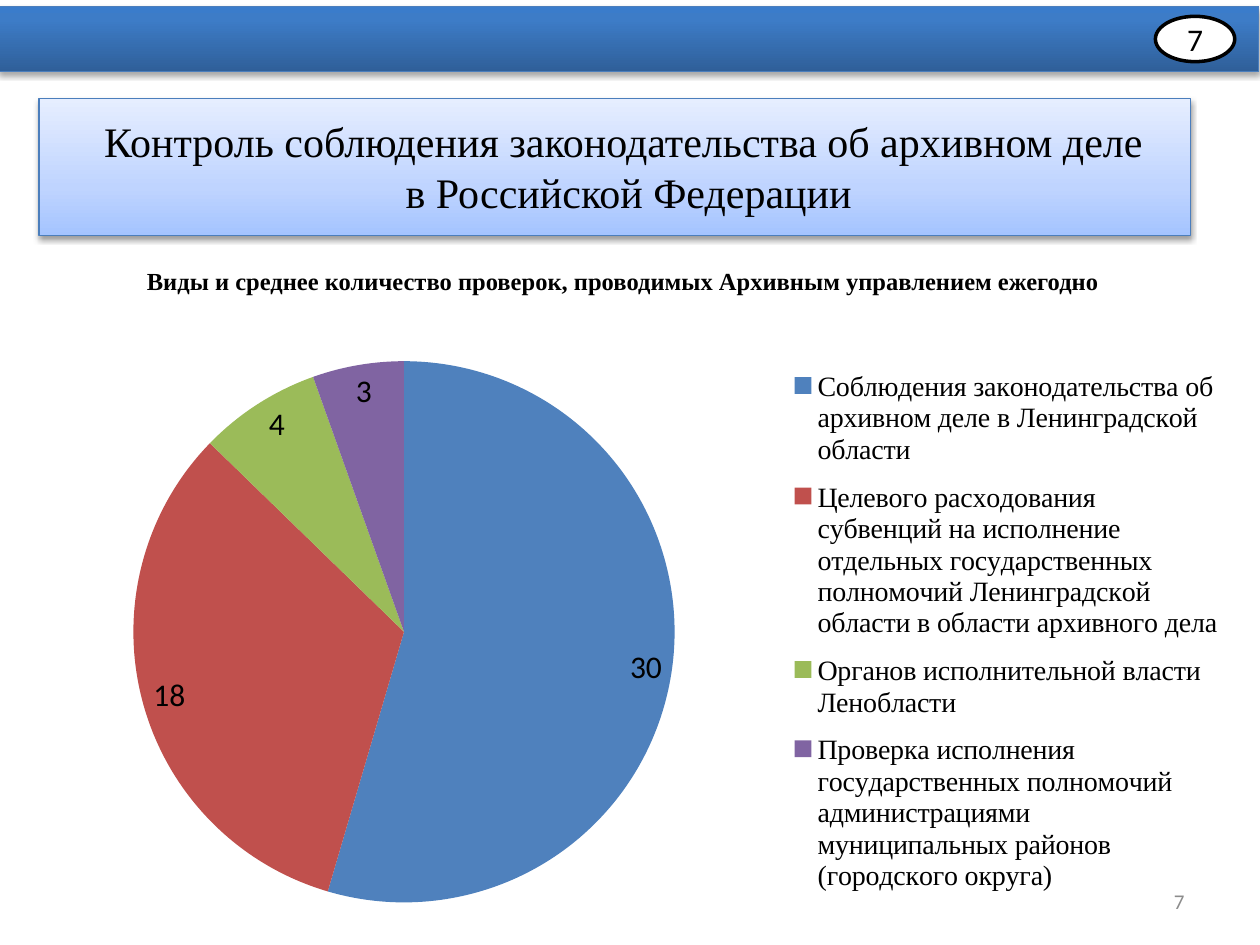
from lxml.etree import SubElement
from pptx import Presentation
from pptx.chart.data import CategoryChartData
from pptx.dml.color import RGBColor
from pptx.enum.chart import XL_CHART_TYPE, XL_LABEL_POSITION, XL_LEGEND_POSITION
from pptx.enum.shapes import MSO_SHAPE
from pptx.enum.text import MSO_ANCHOR, PP_ALIGN
from pptx.oxml import parse_xml
from pptx.oxml.ns import nsdecls, qn
from pptx.util import Inches, Pt

BLACK = RGBColor(0x00, 0x00, 0x00)
WHITE = RGBColor(0xFF, 0xFF, 0xFF)
GREY = RGBColor(0x8C, 0x8C, 0x8C)
EDGE = RGBColor(0x4B, 0x7E, 0xBC)
PALE = [(0, RGBColor(0xA4, 0xC4, 0xFF)), (35, RGBColor(0xBF, 0xD4, 0xFF)),
        (100, RGBColor(0xE6, 0xEE, 0xFF))]
DEEP = [(0, RGBColor(0x2F, 0x5F, 0x99)), (80, RGBColor(0x3D, 0x7C, 0xC7)),
        (100, RGBColor(0x3A, 0x7C, 0xCB))]
SERIF = "Times New Roman"
SANS = "Calibri"
CHECKS = [
    ("Соблюдения законодательства об архивном деле в Ленинградской области",
     30, RGBColor(0x4F, 0x81, 0xBD)),
    ("Целевого расходования субвенций на исполнение отдельных государственных "
     "полномочий Ленинградской области в области архивного дела",
     18, RGBColor(0xC0, 0x50, 0x4D)),
    ("Органов исполнительной власти Ленобласти ",
     4, RGBColor(0x9B, 0xBB, 0x59)),
    ("Проверка исполнения государственных полномочий администрациями "
     "муниципальных районов (городского округа) ",
     3, RGBColor(0x80, 0x64, 0xA2)),
]


def set_font(font, name, size, color=BLACK, bold=False):
    font.name, font.size, font.bold = name, Pt(size), bold
    font.color.rgb = color


def write(shape, lines, name, size, color=BLACK, bold=False,
          align=PP_ALIGN.CENTER, anchor=MSO_ANCHOR.TOP):
    frame = shape.text_frame
    frame.word_wrap = True
    frame.vertical_anchor = anchor
    frame.text = "\n".join(lines)
    for para in frame.paragraphs:
        para.alignment = align
        for run in para.runs:
            set_font(run.font, name, size, color, bold)


def add_text(shapes, x, y, w, h, lines, *style, **more):
    box = shapes.add_textbox(Inches(x), Inches(y), Inches(w), Inches(h))
    write(box, lines, *style, **more)


def add_panel(shapes, x, y, w, h, stops, alpha):
    panel = shapes.add_shape(MSO_SHAPE.RECTANGLE, Inches(x), Inches(y),
                             Inches(w), Inches(h))
    panel.fill.gradient()
    panel.fill.gradient_angle = 90
    props = panel._element.spPr
    ramp = props.find(".//" + qn("a:gsLst"))
    for old in list(ramp):
        ramp.remove(old)
    for pos, color in stops:
        stop = SubElement(ramp, qn("a:gs"), pos=str(pos * 1000))
        SubElement(stop, qn("a:srgbClr"), val=str(color))
    panel.line.color.rgb = EDGE
    panel.line.width = Pt(0.75)
    panel.shadow.inherit = False
    props.find(qn("a:effectLst")).append(parse_xml(
        f'<a:outerShdw {nsdecls("a")} blurRad="{Pt(3.1)}" dist="{Pt(1.7)}" '
        f'dir="5400000" rotWithShape="0"><a:srgbClr val="000000">'
        f'<a:alpha val="{alpha * 1000}"/></a:srgbClr></a:outerShdw>'))


def add_title(shapes, x, y, w, h):
    add_panel(shapes, x, y, w, h, PALE, 38)
    add_text(shapes, x + 0.11, y + 0.09, w, 0.91,
             ["Контроль соблюдения законодательства об архивном деле ",
              "в Российской Федерации"], SERIF, 24)


def add_band(shapes, x, y, w, h):
    group = shapes.add_group_shape().shapes
    add_panel(group, x, y, w, h, DEEP, 35)
    badge = group.add_shape(MSO_SHAPE.OVAL, Inches(x + 9.18), Inches(y + 0.08),
                            Inches(0.63), Inches(0.36))
    badge.shadow.inherit = False
    badge.fill.solid()
    badge.fill.fore_color.rgb = WHITE
    badge.line.color.rgb = BLACK
    badge.line.width = Pt(2)
    write(badge, ["7"], SANS, 18, anchor=MSO_ANCHOR.MIDDLE)


def set_layout(part, inner, **edges):
    layout = part.find(qn("c:layout"))
    if layout is None:
        layout = parse_xml(f'<c:layout {nsdecls("c")}/>')
        if inner:
            part.insert(0, layout)
        else:
            part.find(qn("c:legendPos")).addnext(layout)
    manual = SubElement(layout, qn("c:manualLayout"))
    if inner:
        SubElement(manual, qn("c:layoutTarget"), val="inner")
    for mode in ("xMode", "yMode"):
        SubElement(manual, qn("c:" + mode), val="edge")
    for edge, value in edges.items():
        SubElement(manual, qn("c:" + edge), val=str(value))


def add_pie(shapes, x, y, w, h):
    names, counts, colors = zip(*CHECKS)
    data = CategoryChartData()
    data.categories = names
    data.add_series("Series 1", counts)
    chart = shapes.add_chart(XL_CHART_TYPE.PIE, Inches(x), Inches(y),
                             Inches(w), Inches(h), data).chart
    set_font(chart.font, SANS, 18)
    chart.has_title = False
    chart.has_legend = True
    legend = chart.legend
    legend.position = XL_LEGEND_POSITION.RIGHT
    legend.include_in_layout = False
    set_font(legend.font, SERIF, 16)
    plot = chart.plots[0]
    plot.vary_by_categories = True
    plot.has_data_labels = True
    labels = plot.data_labels
    labels.show_value = True
    labels.show_percentage = False
    labels.position = XL_LABEL_POSITION.BEST_FIT
    set_font(labels.font, SANS, 18)
    for i, color in enumerate(colors):
        fill = plot.series[0].points[i].format.fill
        fill.solid()
        fill.fore_color.rgb = color
    area = chart._chartSpace.chart.plotArea
    set_layout(area, True, x=0.09, y=0.03, w=0.45, h=0.94)
    set_layout(legend._element, False, x=0.64, y=0.02, w=0.35, h=0.96)


def main():
    deck = Presentation()
    deck.slide_width, deck.slide_height = Inches(10), Inches(7.5)
    shapes = deck.slides.add_slide(deck.slide_layouts[6]).shapes
    add_title(shapes, 0.31, 0.78, 9.14, 1.09)
    add_text(shapes, 0.31, 2.06, 9.32, 0.34,
             ["Виды и среднее количество проверок, проводимых "
              "Архивным управлением ежегодно "], SERIF, 14, bold=True)
    add_band(shapes, -0.01, 0.05, 10, 0.52)
    add_pie(shapes, 0.17, 2.73, 9.64, 4.57)
    add_text(shapes, 7.17, 6.95, 2.33, 0.4, ["7"], SANS, 12, GREY,
             align=PP_ALIGN.RIGHT, anchor=MSO_ANCHOR.MIDDLE)
    deck.save("out.pptx")


if __name__ == "__main__":
    main()
